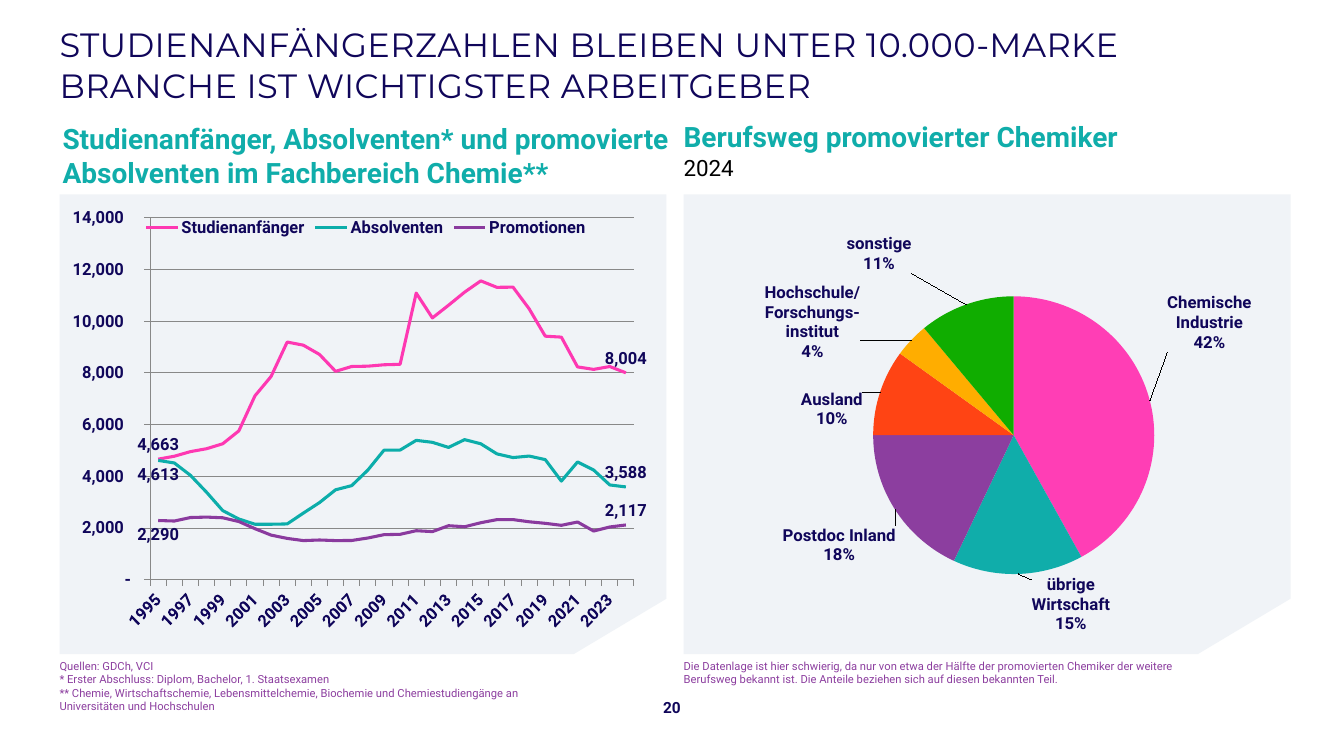
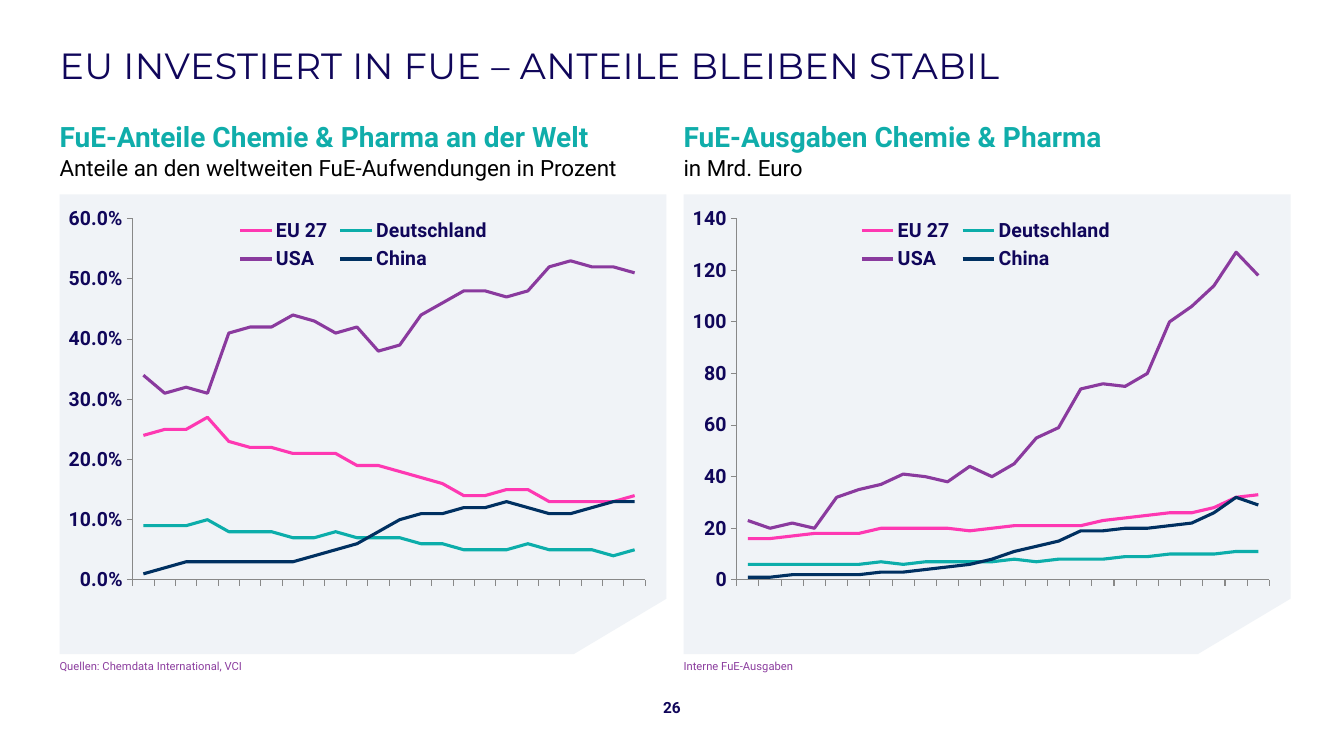
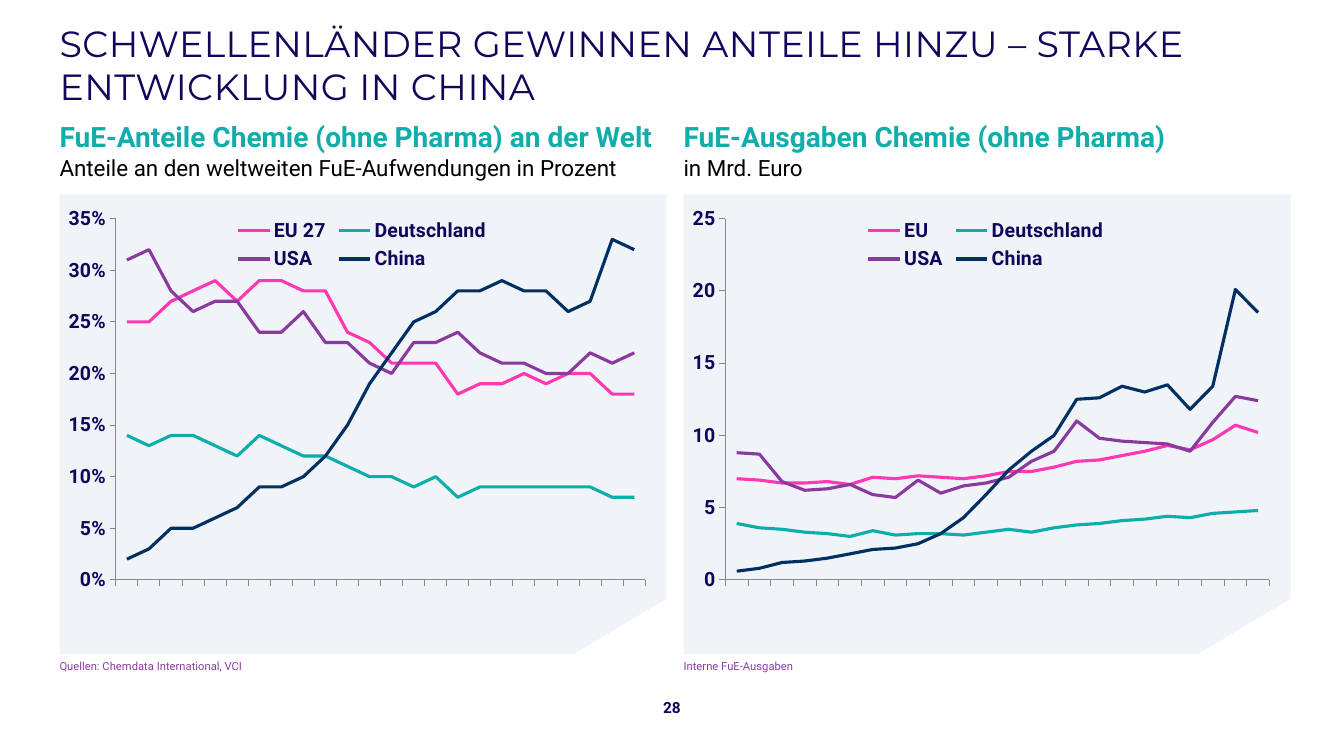
from lxml import etree
from pptx import Presentation
from pptx.chart.data import CategoryChartData
from pptx.dml.color import RGBColor
from pptx.enum.chart import (XL_CHART_TYPE, XL_LABEL_POSITION, XL_LEGEND_POSITION,
                             XL_TICK_LABEL_POSITION, XL_TICK_MARK)
from pptx.enum.text import MSO_ANCHOR, MSO_AUTO_SIZE, PP_ALIGN
from pptx.oxml.ns import qn
from pptx.util import Inches, Pt

LINE_CHART, PIE_CHART = XL_CHART_TYPE.LINE, XL_CHART_TYPE.PIE
ABOVE, BELOW = XL_LABEL_POSITION.ABOVE, XL_LABEL_POSITION.BELOW
OUTSIDE_END = XL_LABEL_POSITION.OUTSIDE_END
LEGEND_TOP = XL_LEGEND_POSITION.TOP
NO_TICK_LABELS, LOW_LABELS = XL_TICK_LABEL_POSITION.NONE, XL_TICK_LABEL_POSITION.LOW
TICK_OUT, TICK_NONE = XL_TICK_MARK.OUTSIDE, XL_TICK_MARK.NONE
TOP, MIDDLE = MSO_ANCHOR.TOP, MSO_ANCHOR.MIDDLE
NO_AUTOFIT = MSO_AUTO_SIZE.NONE
LEFT, CENTER = PP_ALIGN.LEFT, PP_ALIGN.CENTER

NAVY = RGBColor(0x10, 0x06, 0x5A)
TEAL = RGBColor(0x10, 0xAD, 0xAA)
PURPLE = RGBColor(0x8C, 0x3E, 0x9F)
BLACK = RGBColor(0, 0, 0)
PANEL_GREY = RGBColor(0xF0, 0xF3, 0xF7)
AXIS_GREY = RGBColor(0x88, 0x88, 0x88)
LINE_COLORS = [RGBColor(0xFE, 0x38, 0xB2), RGBColor(0x0C, 0xAD, 0xAA),
               RGBColor(0x8A, 0x3A, 0x9E), RGBColor(0x00, 0x30, 0x61)]
SLICE_COLORS = [RGBColor(0xFF, 0x3E, 0xB5), TEAL, PURPLE, RGBColor(0xFF, 0x44, 0x14),
                RGBColor(0xFF, 0xAD, 0x00), RGBColor(0x10, 0xAD, 0x00)]
TITLE_FONT, BODY_FONT = "Montserrat", "Roboto"

COLUMNS = (0.59, 6.78)
COLUMN_WIDTH = 6.02
CHART_INSET, CHART_TOP = 0.09, 2.05
CHART_WIDTH, CHART_HEIGHT = 5.79, 4.29
PLOT_TOP, PLOT_HEIGHT = 0.11, 3.59

RESEARCH_YEARS = [str(year) for year in range(2000, 2024)]
STUDY_YEARS = [str(year) for year in range(1995, 2025)]
SHARE_SUBTITLE = "Anteile an den weltweiten FuE-Aufwendungen in Prozent"
SPENDING_SUBTITLE = "in Mrd. Euro"
SHARE_SOURCE = ["Quellen: Chemdata International, VCI"]
SPENDING_SOURCE = ["Interne FuE-Ausgaben"]

STUDENTS = {
    "Studienanfänger": [4663, 4776, 4955, 5066, 5258, 5757, 7114, 7864, 9195, 9073,
                        8715, 8061, 8249, 8261, 8315, 8333, 11089, 10128, 10617, 11126,
                        11560, 11311, 11317, 10481, 9422, 9384, 8233, 8137, 8248, 8004],
    "Absolventen": [4613, 4515, 4037, 3382, 2673, 2348, 2146, 2146, 2157, 2577,
                    2982, 3477, 3639, 4240, 5010, 5014, 5391, 5314, 5117, 5418,
                    5258, 4867, 4725, 4783, 4646, 3814, 4554, 4242, 3665, 3588],
    "Promotionen": [2290, 2270, 2405, 2422, 2396, 2249, 1973, 1724, 1598, 1513,
                    1536, 1513, 1517, 1613, 1741, 1755, 1895, 1859, 2089, 2049,
                    2204, 2323, 2325, 2240, 2181, 2104, 2231, 1883, 2040, 2117],
}
CAREERS = [
    ("Chemische Industrie", 42, 0.02, -0.11),
    ("übrige Wirtschaft", 15, 0.09, 0),
    ("Postdoc Inland", 18, 0.01, 0.03),
    ("Ausland", 10, -0.02, 0.09),
    ("Hochschule/ Forschungs-institut", 4, -0.08, 0.06),
    ("sonstige", 11, -0.09, -0.06),
]
PHARMA_SHARES = {
    "EU 27": [0.24, 0.25, 0.25, 0.27, 0.23, 0.22, 0.22, 0.21, 0.21, 0.21, 0.19, 0.19,
              0.18, 0.17, 0.16, 0.14, 0.14, 0.15, 0.15, 0.13, 0.13, 0.13, 0.13, 0.14],
    "Deutschland": [0.09, 0.09, 0.09, 0.1, 0.08, 0.08, 0.08, 0.07, 0.07, 0.08, 0.07, 0.07,
                    0.07, 0.06, 0.06, 0.05, 0.05, 0.05, 0.06, 0.05, 0.05, 0.05, 0.04, 0.05],
    "USA": [0.34, 0.31, 0.32, 0.31, 0.41, 0.42, 0.42, 0.44, 0.43, 0.41, 0.42, 0.38,
            0.39, 0.44, 0.46, 0.48, 0.48, 0.47, 0.48, 0.52, 0.53, 0.52, 0.52, 0.51],
    "China": [0.01, 0.02, 0.03, 0.03, 0.03, 0.03, 0.03, 0.03, 0.04, 0.05, 0.06, 0.08,
              0.1, 0.11, 0.11, 0.12, 0.12, 0.13, 0.12, 0.11, 0.11, 0.12, 0.13, 0.13],
}
PHARMA_SPENDING = {
    "EU 27": [16, 16, 17, 18, 18, 18, 20, 20, 20, 20, 19, 20,
              21, 21, 21, 21, 23, 24, 25, 26, 26, 28, 32, 33],
    "Deutschland": [6, 6, 6, 6, 6, 6, 7, 6, 7, 7, 7, 7,
                    8, 7, 8, 8, 8, 9, 9, 10, 10, 10, 11, 11],
    "USA": [23, 20, 22, 20, 32, 35, 37, 41, 40, 38, 44, 40,
            45, 55, 59, 74, 76, 75, 80, 100, 106, 114, 127, 118],
    "China": [1, 1, 2, 2, 2, 2, 3, 3, 4, 5, 6, 8,
              11, 13, 15, 19, 19, 20, 20, 21, 22, 26, 32, 29],
}
CHEMISTRY_SHARES = {
    "EU 27": [0.25, 0.25, 0.27, 0.28, 0.29, 0.27, 0.29, 0.29, 0.28, 0.28, 0.24, 0.23,
              0.21, 0.21, 0.21, 0.18, 0.19, 0.19, 0.2, 0.19, 0.2, 0.2, 0.18, 0.18],
    "Deutschland": [0.14, 0.13, 0.14, 0.14, 0.13, 0.12, 0.14, 0.13, 0.12, 0.12, 0.11, 0.1,
                    0.1, 0.09, 0.1, 0.08, 0.09, 0.09, 0.09, 0.09, 0.09, 0.09, 0.08, 0.08],
    "USA": [0.31, 0.32, 0.28, 0.26, 0.27, 0.27, 0.24, 0.24, 0.26, 0.23, 0.23, 0.21,
            0.2, 0.23, 0.23, 0.24, 0.22, 0.21, 0.21, 0.2, 0.2, 0.22, 0.21, 0.22],
    "China": [0.02, 0.03, 0.05, 0.05, 0.06, 0.07, 0.09, 0.09, 0.1, 0.12, 0.15, 0.19,
              0.22, 0.25, 0.26, 0.28, 0.28, 0.29, 0.28, 0.28, 0.26, 0.27, 0.33, 0.32],
}
CHEMISTRY_SPENDING = {
    "EU": [7, 6.9, 6.7, 6.7, 6.8, 6.6, 7.1, 7, 7.2, 7.1, 7, 7.2,
           7.5, 7.5, 7.8, 8.2, 8.3, 8.6, 8.9, 9.3, 9, 9.7, 10.7, 10.2],
    "Deutschland": [3.9, 3.6, 3.5, 3.3, 3.2, 3, 3.4, 3.1, 3.2, 3.2, 3.1, 3.3,
                    3.5, 3.3, 3.6, 3.8, 3.9, 4.1, 4.2, 4.4, 4.3, 4.6, 4.7, 4.8],
    "USA": [8.8, 8.7, 6.8, 6.2, 6.3, 6.6, 5.9, 5.7, 6.9, 6, 6.5, 6.7,
            7.1, 8.2, 8.9, 11, 9.8, 9.6, 9.5, 9.4, 8.9, 10.9, 12.7, 12.4],
    "China": [0.6, 0.8, 1.2, 1.3, 1.5, 1.8, 2.1, 2.2, 2.5, 3.2, 4.3, 5.9,
              7.6, 8.9, 10, 12.5, 12.6, 13.4, 13, 13.5, 11.8, 13.4, 20.1, 18.5],
}


def style_font(font, size, color, bold=False, name=BODY_FONT):
    font.name, font.size, font.bold = name, Pt(size), bold
    font.color.rgb = color


def add_text(slide, left, top, width, height, lines, size, color, bold=False,
             align=LEFT, anchor=TOP):
    frame = slide.shapes.add_textbox(Inches(left), Inches(top),
                                     Inches(width), Inches(height)).text_frame
    frame.word_wrap = True
    frame.margin_left = frame.margin_right = frame.margin_top = frame.margin_bottom = 0
    frame.vertical_anchor = anchor
    frame.text = "\n".join(lines)
    for paragraph in frame.paragraphs:
        paragraph.alignment = align
        for run in paragraph.runs:
            style_font(run.font, size, color, bold)


def add_panel(slide, left):
    top, right, bottom = 1.93, left + COLUMN_WIDTH, 6.49
    builder = slide.shapes.build_freeform(Inches(left), Inches(top))
    corners = [(right, top), (right, 5.94), (right - 0.92, bottom), (left, bottom)]
    builder.add_line_segments([(Inches(x), Inches(y)) for x, y in corners])
    panel = builder.convert_to_shape()
    panel.shadow.inherit = False
    panel.fill.solid()
    panel.fill.fore_color.rgb = PANEL_GREY
    panel.line.fill.background()


def add_base_slide(prs, title_text, title_size, page):
    slide = prs.slides.add_slide(prs.slide_layouts[5])
    for left in COLUMNS:
        add_panel(slide, left)
    title = slide.shapes.title
    title.left, title.top = Inches(COLUMNS[0]), Inches(0.15)
    title.width, title.height = Inches(12.2), Inches(0.98)
    frame = title.text_frame
    frame.word_wrap, frame.auto_size = True, NO_AUTOFIT
    frame.margin_left = frame.margin_right = 0
    frame.margin_top = frame.margin_bottom = Inches(0.04)
    frame.vertical_anchor = MIDDLE
    frame.text = title_text
    frame.paragraphs[0].alignment = LEFT
    for run in frame.paragraphs[0].runs:
        style_font(run.font, title_size, NAVY, name=TITLE_FONT)
        run._r.get_or_add_rPr().set("spc", "30")
    add_text(slide, 6.37, 6.88, 0.59, 0.28, [page], 11, NAVY, True, CENTER, MIDDLE)
    return slide


def add_heading(slide, left, heading, subtitle=None, top=1.19):
    add_text(slide, left, top, COLUMN_WIDTH, 0.31, [heading], 20, TEAL, True)
    if subtitle:
        add_text(slide, left, 1.53, COLUMN_WIDTH, 0.28, [subtitle], 16, BLACK)


def add_footnote(slide, left, lines):
    add_text(slide, left, 6.54, 5.08, 0.13, lines, 8, PURPLE)


def make_layout(x, y, width=None, height=None, inner=False):
    layout = etree.Element(qn("c:layout"))
    manual = etree.SubElement(layout, qn("c:manualLayout"))
    settings = [("layoutTarget", "inner")] if inner else []
    if width is not None:
        settings += [("xMode", "edge"), ("yMode", "edge")]
    settings += [("x", x), ("y", y)]
    if width is not None:
        settings += [("w", width), ("h", height)]
    for tag, value in settings:
        etree.SubElement(manual, qn("c:" + tag)).set("val", str(value))
    return layout


def place_plot(chart, x, y, width, height):
    plot_area = chart.element.xpath(".//c:plotArea")[0]
    for layout in plot_area.findall(qn("c:layout")):
        plot_area.remove(layout)
    plot_area.insert(0, make_layout(x, y, width, height, inner=True))


def add_chart(slide, chart_type, column, data, size):
    chart = slide.shapes.add_chart(
        chart_type, Inches(column + CHART_INSET), Inches(CHART_TOP),
        Inches(CHART_WIDTH), Inches(CHART_HEIGHT), data).chart
    chart.has_title = False
    style_font(chart.font, size, NAVY, True)
    return chart


def style_axis(axis, size):
    axis.major_tick_mark, axis.minor_tick_mark = TICK_OUT, TICK_NONE
    axis.format.line.color.rgb = AXIS_GREY
    axis.format.line.width = Pt(0.75)
    style_font(axis.tick_labels.font, size, NAVY, True)


def add_line_chart(slide, column, years, series_values, top_value, step, axis_format,
                   plot_left, legend_box, plot_right=5.72, size=14, data_format="General"):
    data = CategoryChartData(number_format=data_format)
    data.categories = years
    for name, values in series_values.items():
        data.add_series(name, values)
    chart = add_chart(slide, LINE_CHART, column, data, size)
    place_plot(chart, round(plot_left / CHART_WIDTH, 3), round(PLOT_TOP / CHART_HEIGHT, 3),
               round((plot_right - plot_left) / CHART_WIDTH, 3),
               round(PLOT_HEIGHT / CHART_HEIGHT, 3))
    chart.plots[0].vary_by_categories = False
    for series, color in zip(chart.plots[0].series, LINE_COLORS):
        series.smooth = False
        series.format.line.color.rgb = color
        series.format.line.width = Pt(2.25)
    values_axis = chart.value_axis
    values_axis.minimum_scale, values_axis.maximum_scale = 0, top_value
    values_axis.major_unit = step
    values_axis.has_major_gridlines = False
    style_axis(values_axis, size)
    values_axis.tick_labels.number_format = axis_format
    values_axis.tick_labels.number_format_is_linked = False
    style_axis(chart.category_axis, size)
    chart.category_axis.tick_label_position = NO_TICK_LABELS
    chart.has_legend = True
    chart.legend.position = LEGEND_TOP
    chart.legend.include_in_layout = False
    style_font(chart.legend.font, size, NAVY, True)
    chart.element.xpath(".//c:legendPos")[0].addnext(make_layout(*legend_box))
    return chart


def add_student_chart(slide):
    chart = add_line_chart(
        slide, COLUMNS[0], STUDY_YEARS, STUDENTS, 14000, 2000,
        '_-* #,##0\\ _€_-;\\-* #,##0\\ _€_-;_-* "-"?', 0.71, (0.2, 0.02, 0.69, 0.06),
        plot_right=5.6, size=12, data_format="#,##0")
    gridlines = chart.value_axis
    gridlines.has_major_gridlines = True
    gridlines.major_gridlines.format.line.color.rgb = AXIS_GREY
    gridlines.major_gridlines.format.line.width = Pt(0.75)
    year_axis = chart.category_axis
    year_axis.tick_label_position = LOW_LABELS
    year_axis.tick_labels.font
    year_axis_element = chart.element.xpath(".//c:catAx")[0]
    year_axis_element.xpath("./c:txPr/a:bodyPr")[0].set("rot", "-2700000")
    skip = etree.Element(qn("c:tickLblSkip"))
    skip.set("val", "2")
    year_axis_element.find(qn("c:noMultiLvlLbl")).addprevious(skip)
    for series, first_position in zip(chart.plots[0].series, (ABOVE, BELOW, BELOW)):
        series.data_labels.show_value = False
        for index, position in ((0, first_position), (len(STUDY_YEARS) - 1, ABOVE)):
            label = series.points[index].data_label
            style_font(label.font, 12, NAVY, True)
            label.position = position


def add_career_chart(slide):
    data = CategoryChartData()
    data.categories = [career for career, *_ in CAREERS]
    data.add_series("Series 1", [percent for _, percent, *_ in CAREERS])
    chart = add_chart(slide, PIE_CHART, COLUMNS[1], data, 12)
    chart.has_legend = False
    place_plot(chart, 0.3, 0.21, 0.5, 0.65)
    series = chart.plots[0].series[0]
    labels = series.data_labels
    labels.show_value = False
    labels.show_percentage = labels.show_category_name = True
    labels.number_format, labels.number_format_is_linked = "0%", False
    labels.position = OUTSIDE_END
    style_font(labels.font, 12, NAVY, True)
    for index, color in enumerate(SLICE_COLORS):
        point = series.points[index]
        point.format.fill.solid()
        point.format.fill.fore_color.rgb = color
        style_font(point.data_label.font, 12, NAVY, True)
        point.data_label.position = OUTSIDE_END
    for label, (_, _, shift_x, shift_y) in zip(chart.element.xpath(".//c:dLbl"), CAREERS):
        label.find(qn("c:idx")).addnext(make_layout(shift_x, shift_y))
        for tag, shown in (("showVal", "0"), ("showCatName", "1"), ("showPercent", "1")):
            label.find(qn("c:" + tag)).set("val", shown)
        separator = etree.SubElement(label, qn("c:separator"))
        separator.text = "\n"


def add_research_slide(prs, title, page, scope, share_chart, spending_chart):
    slide = add_base_slide(prs, title, 26, page)
    share_heading = f"FuE-Anteile {scope} an der Welt"
    spending_heading = f"FuE-Ausgaben {scope}"
    halves = zip(COLUMNS, (share_heading, spending_heading),
                 (SHARE_SUBTITLE, SPENDING_SUBTITLE), (SHARE_SOURCE, SPENDING_SOURCE),
                 (share_chart, spending_chart))
    for column, heading, subtitle, source, chart_settings in halves:
        add_heading(slide, column, heading, subtitle)
        add_footnote(slide, column, source)
        add_line_chart(slide, column, RESEARCH_YEARS, *chart_settings)


def add_career_slide(prs):
    slide = add_base_slide(
        prs, "STUDIENANFÄNGERZAHLEN BLEIBEN UNTER 10.000-MARKE\v"
             "BRANCHE IST WICHTIGSTER ARBEITGEBER", 24, "20")
    add_heading(slide, 0.62, "Studienanfänger, Absolventen* und promovierte "
                             "Absolventen im Fachbereich Chemie**", top=1.21)
    add_heading(slide, COLUMNS[1], "Berufsweg promovierter Chemiker", "2024")
    add_footnote(slide, COLUMNS[0], [
        "Quellen: GDCh, VCI",
        "* Erster Abschluss: Diplom, Bachelor, 1. Staatsexamen",
        "** Chemie, Wirtschaftschemie, Lebensmittelchemie, Biochemie und "
        "Chemiestudiengänge an Universitäten und Hochschulen"])
    add_footnote(slide, COLUMNS[1], [
        "Die Datenlage ist hier schwierig, da nur von etwa der Hälfte der promovierten "
        "Chemiker der weitere Berufsweg bekannt ist. Die Anteile beziehen sich auf "
        "diesen bekannten Teil."])
    add_student_chart(slide)
    add_career_chart(slide)


def main():
    prs = Presentation()
    prs.slide_width, prs.slide_height = Inches(13.33), Inches(7.5)
    add_career_slide(prs)
    add_research_slide(
        prs, "EU INVESTIERT IN FUE – ANTEILE BLEIBEN STABIL", "26", "Chemie & Pharma",
        (PHARMA_SHARES, 0.6, 0.1, "0.0%", 0.58, (0.34, 0.03, 0.41, 0.14)),
        (PHARMA_SPENDING, 140, 20, "#,##0", 0.41, (0.32, 0.03, 0.41, 0.14)))
    add_research_slide(
        prs, "SCHWELLENLÄNDER GEWINNEN ANTEILE HINZU – STARKE ENTWICKLUNG IN CHINA",
        "28", "Chemie (ohne Pharma)",
        (CHEMISTRY_SHARES, 0.35, 0.05, "0%", 0.44, (0.32, 0.03, 0.41, 0.14)),
        (CHEMISTRY_SPENDING, 25, 5, "General", 0.3, (0.32, 0.03, 0.41, 0.14)))
    prs.save("out.pptx")


if __name__ == "__main__":
    main()
